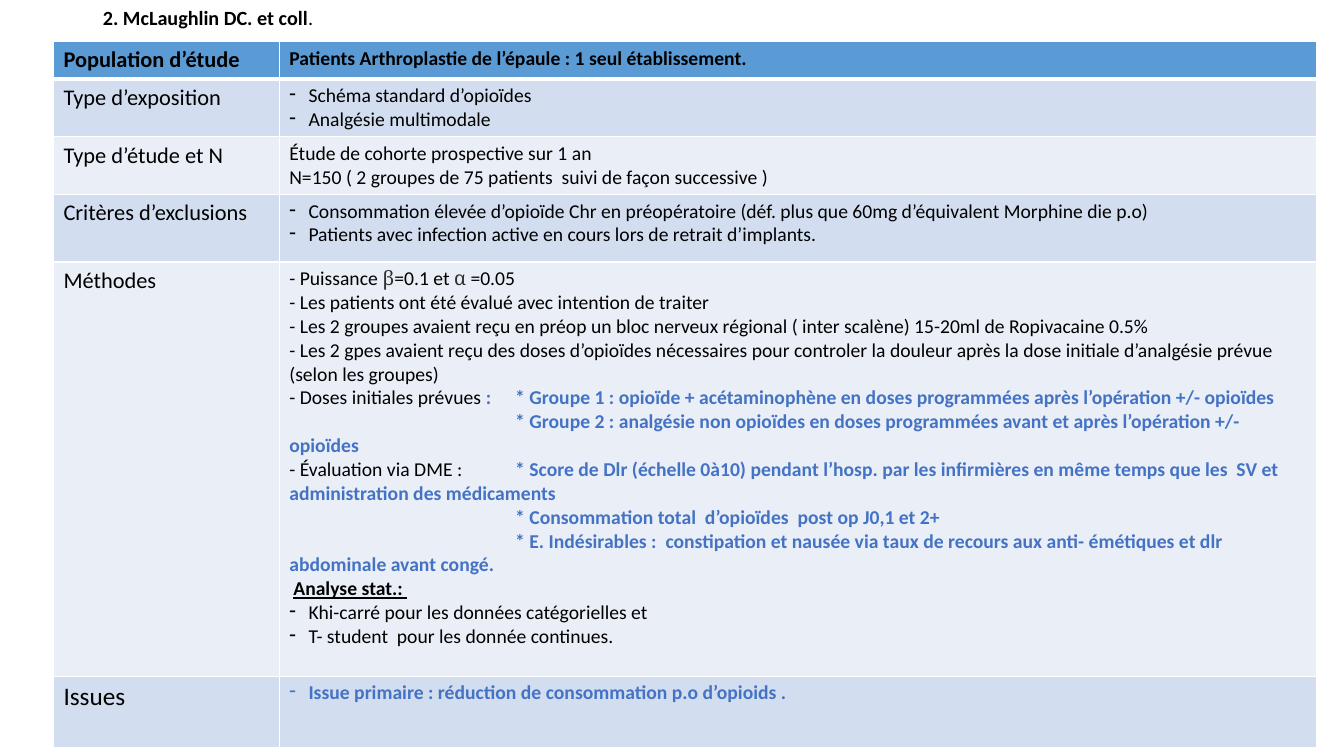
from lxml.etree import SubElement
from pptx import Presentation
from pptx.dml.color import RGBColor
from pptx.enum.text import MSO_ANCHOR, MSO_AUTO_SIZE, PP_ALIGN
from pptx.oxml.ns import qn
from pptx.util import Inches, Pt

BLACK, WHITE, GREY, ACCENT = "000000", "FFFFFF", "2E2E2E", "4472C4"
HEADER, BAND_DARK, BAND_LIGHT = "5B9BD5", "D2DEEF", "EAEFF7"
BULLET_INDENT = 0.19
STAR_INDENT = 2.24


def color(hex_code):
    return RGBColor.from_string(hex_code)


def add_text(paragraph, text, size=14, bold=False, underline=False,
             fill=BLACK, font="Calibri"):
    run = paragraph.add_run()
    run.text = text
    run.font.size = Pt(size)
    run.font.bold = bold
    run.font.underline = underline
    run.font.name = font
    run.font.color.rgb = color(fill)


def line(*runs, bullet=False, indent=0, tab=0):
    """Describe a paragraph; each run is a text or a (text, format) pair."""
    pairs = [(run, {}) if isinstance(run, str) else run for run in runs]
    return {"runs": pairs, "bullet": bullet, "indent": indent, "tab": tab}


def bullets(*texts, **style):
    return [line((text, style), bullet=True) for text in texts]


def star(text):
    return line((text, KEY), indent=STAR_INDENT)


class StudySlide:
    def __init__(self, presentation):
        self.slide = presentation.slides.add_slide(presentation.slide_layouts[5])

    def title(self, left, top, width, height, *runs):
        title = self.slide.shapes.title
        title.left, title.top = Inches(left), Inches(top)
        title.width, title.height = Inches(width), Inches(height)
        frame = title.text_frame
        frame.word_wrap = True
        frame.auto_size = MSO_AUTO_SIZE.NONE
        frame.vertical_anchor = MSO_ANCHOR.MIDDLE
        heading = frame.paragraphs[0]
        heading.alignment = PP_ALIGN.LEFT
        heading.line_spacing = 0.9
        for text, style in runs:
            add_text(heading, text, **style)

    def table(self, left, top, widths, heights, rows):
        table = self.slide.shapes.add_table(
            len(rows), len(widths), Inches(left), Inches(top),
            Inches(sum(widths)), Inches(sum(heights))).table
        table.horz_banding = False
        for column, width in zip(table.columns, widths):
            column.width = Inches(width)
        for index, (row, height, lines) in enumerate(zip(table.rows, heights, rows)):
            row.height = Inches(height)
            band = HEADER if index == 0 else BAND_DARK if index % 2 else BAND_LIGHT
            for cell, content in zip(row.cells, lines):
                self.borders(cell, top=3 if index == 1 else 1,
                             bottom=3 if index == 0 else 1)
                cell.fill.solid()
                cell.fill.fore_color.rgb = color(band)
                self.fill_cell(cell, content)

    def borders(self, cell, top, bottom):
        properties = cell._tc.get_or_add_tcPr()
        for side, points in (("L", 1), ("R", 1), ("T", top), ("B", bottom)):
            edge = SubElement(properties, qn("a:ln" + side), w=str(Pt(points)))
            solid = SubElement(edge, qn("a:solidFill"))
            SubElement(solid, qn("a:srgbClr"), val=WHITE)

    def fill_cell(self, cell, content):
        frame = cell.text_frame
        for index, item in enumerate(content):
            paragraph = frame.add_paragraph() if index else frame.paragraphs[0]
            self.indent(paragraph, item)
            for text, style in item["runs"]:
                add_text(paragraph, text, **style)

    def indent(self, paragraph, item):
        properties = paragraph._p.get_or_add_pPr()
        if item["bullet"]:
            properties.set("marL", str(Inches(BULLET_INDENT)))
            properties.set("indent", str(-Inches(BULLET_INDENT)))
            SubElement(properties, qn("a:buChar"), char="-")
        elif item["indent"]:
            properties.set("marL", "0")
            properties.set("indent", str(Inches(item["indent"])))
        if item["tab"]:
            stops = SubElement(properties, qn("a:tabLst"))
            SubElement(stops, qn("a:tab"), pos=str(Inches(item["tab"])), algn="l")


KEY = {"bold": True, "fill": ACCENT}
GREEK = {"font": "Cambria", "fill": GREY}

# Right-hand cell of the methods row
METHODS = [
    line("- Puissance ", ("β", GREEK), "=0.1 et ", ("α ", GREEK), "=0.05"),
    line("- Les patients ont été évalué avec intention de traiter"),
    line("- Les 2 groupes avaient reçu en préop un bloc nerveux régional "
         "( inter scalène) 15-20ml de Ropivacaine 0.5%"),
    line("- Les 2 gpes avaient reçu des doses d’opioïdes nécessaires pour controler "
         "la douleur après la dose initiale d’analgésie prévue (selon les groupes)"),
    line("- Doses initiales prévues ",
         (":\t* Groupe 1 : opioïde + acétaminophène en doses programmées "
          "après l’opération +/- opioïdes", KEY), tab=STAR_INDENT),
    star("* Groupe 2 : analgésie non opioïdes en doses programmées "
         "avant et après l’opération +/- opioïdes"),
    line("- Évaluation via DME :\t",
         ("* Score de Dlr (échelle 0à10) pendant l’hosp. par les infirmières "
          "en même temps que les  SV et administration des médicaments", KEY),
         tab=STAR_INDENT),
    star("* Consommation total  d’opioïdes  post op J0,1 et 2+"),
    star("* E. Indésirables :  constipation et nausée via taux de recours "
         "aux anti- émétiques et dlr abdominale avant congé."),
    line(("Analyse stat.: ", {"bold": True, "underline": True}), indent=0.04),
    *bullets("Khi-carré pour les données catégorielles et",
             "T- student  pour les donnée continues."),
]

# Label, label format and content of each row
STUDY = [
    ("Population d’étude", {"size": 16, "bold": True},
     [line(("Patients Arthroplastie de l’épaule : 1 seul établissement.",
            {"bold": True}))]),
    ("Type d’exposition", {"size": 16},
     bullets("Schéma standard d’opioïdes", "Analgésie multimodale")),
    ("Type d’étude et N", {"size": 16},
     [line("Étude de cohorte prospective sur 1 an"),
      line("N=150 ( 2 groupes de 75 patients  suivi de façon successive )")]),
    ("Critères d’exclusions", {"size": 16},
     bullets("Consommation élevée d’opioïde Chr en préopératoire "
             "(déf. plus que 60mg d’équivalent Morphine die p.o)",
             "Patients avec infection active en cours lors de retrait d’implants.")),
    ("Méthodes", {"size": 16}, METHODS),
    ("Issues", {"size": 18},
     bullets("Issue primaire : réduction de consommation p.o d’opioids .", **KEY)),
]


def main():
    presentation = Presentation()
    presentation.slide_width = Inches(13.33)
    presentation.slide_height = Inches(7.5)
    study = StudySlide(presentation)

    # Title
    study.title(0.92, 0.06, 11.5, 0.26,
                ("2. McLaughlin DC. et coll", {"size": 14.4, "bold": True}),
                (".", {"size": 14.4}))

    # Study summary
    study.table(0.53, 0.41, [2.24, 10.29], [0.36, 0.55, 0.55, 0.67, 4.11, 0.71],
                [([line((label, style))], content) for label, style, content in STUDY])

    presentation.save("out.pptx")


if __name__ == "__main__":
    main()
